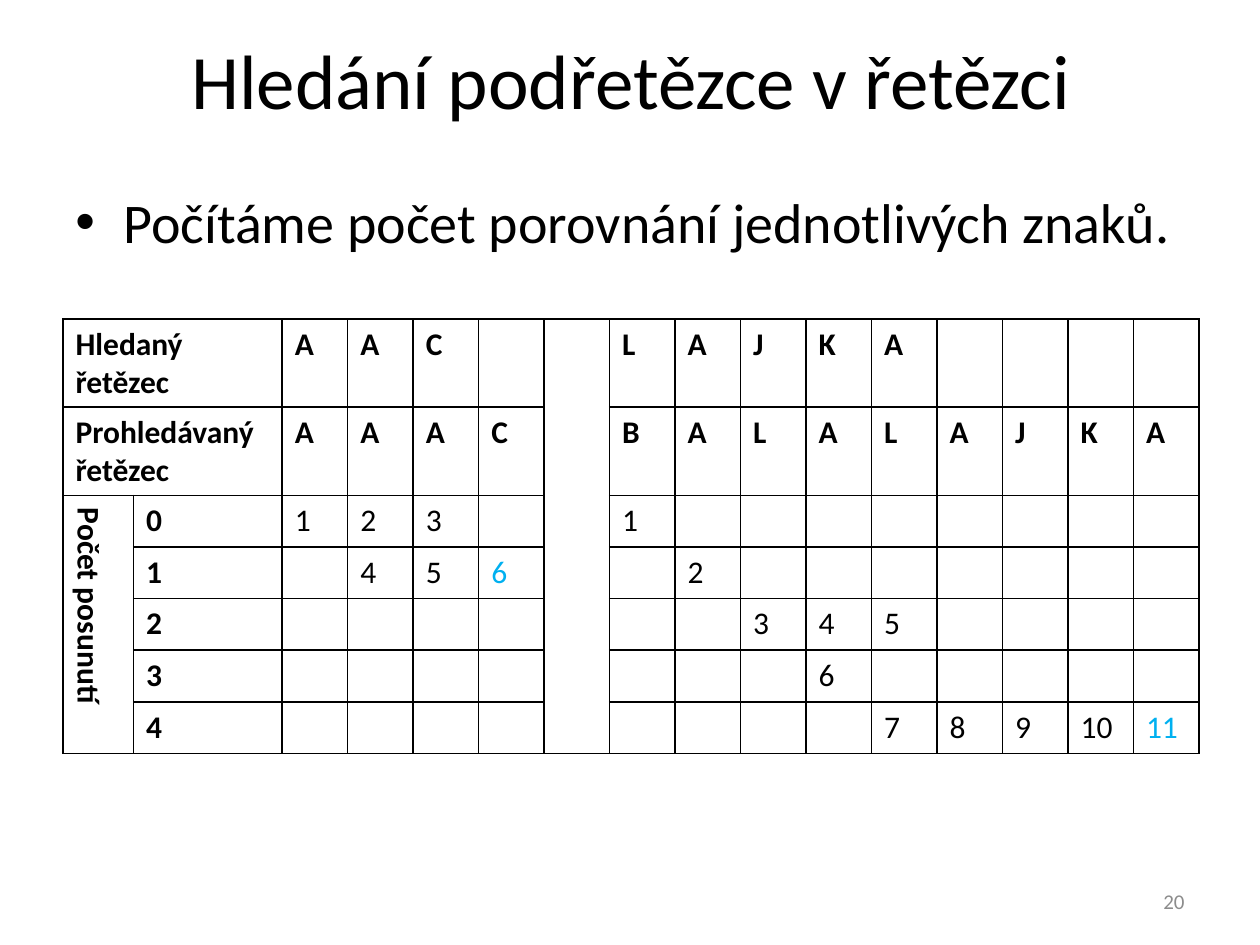
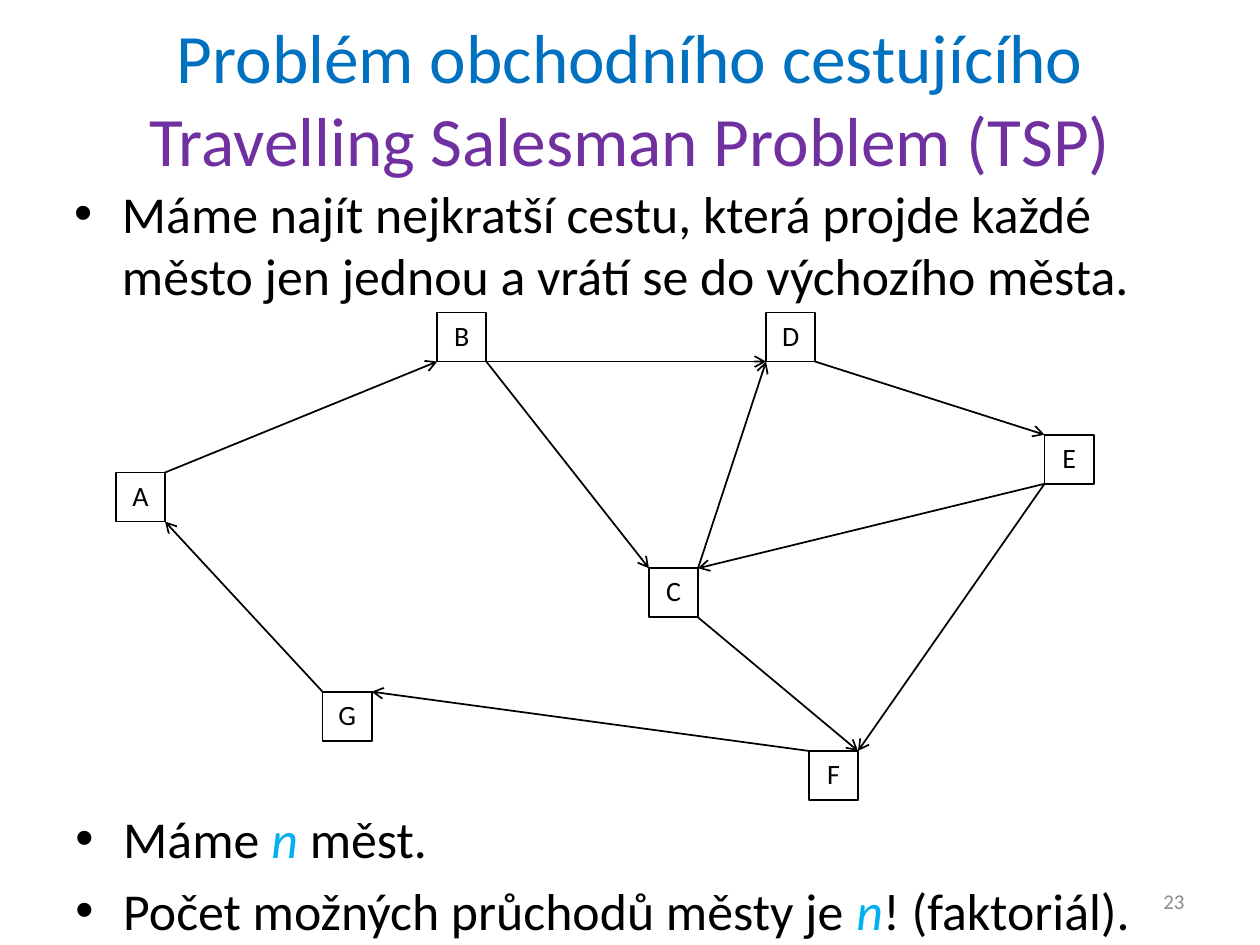
from lxml import etree
from pptx import Presentation
from pptx.dml.color import RGBColor
from pptx.enum.shapes import MSO_CONNECTOR, MSO_SHAPE
from pptx.enum.text import MSO_ANCHOR, PP_ALIGN
from pptx.oxml.ns import qn
from pptx.util import Inches, Pt

LEFT, CENTER, RIGHT = PP_ALIGN.LEFT, PP_ALIGN.CENTER, PP_ALIGN.RIGHT
TOP, MIDDLE = MSO_ANCHOR.TOP, MSO_ANCHOR.MIDDLE
RECTANGLE = MSO_SHAPE.RECTANGLE
STRAIGHT = MSO_CONNECTOR.STRAIGHT

COLORS = {
    "black": "000000",
    "grey": "8C8C8C",
    "blue": "0070C0",
    "purple": "7030A0",
    "accent": "00B0F0",
}
FONT = "Calibri"
LINE_WIDTH = Pt(1)
BREAK = "\n"

SEARCHES = [("AAC", "AAAC", 2), ("LAJKA", "BALALAJKA", 7)]
GAP_COLUMN = 6
COLUMN_WIDTHS = [0.56, 1.18] + [0.52] * 14
ROW_HEIGHT = 0.41
HEADER_ROWS = 2
SHIFTS = 5

CITY_SIZE = 0.39
CITIES = {
    "A": (0.92, 3.75),
    "B": (3.47, 2.48),
    "C": (5.15, 4.51),
    "D": (6.08, 2.48),
    "E": (8.29, 3.45),
    "F": (6.42, 5.96),
    "G": (2.56, 5.49),
}
CORNERS = {"tl": (0, 0), "tr": (1, 0), "bl": (0, 1), "br": (1, 1)}
ROADS = [
    ("A", "tr", "B", "bl"),
    ("B", "br", "C", "tl"),
    ("C", "tr", "D", "bl"),
    ("D", "br", "E", "tl"),
    ("E", "bl", "F", "tr"),
    ("F", "tl", "G", "tr"),
    ("G", "tl", "A", "br"),
    ("B", "br", "D", "bl"),
    ("E", "bl", "C", "tr"),
    ("C", "br", "F", "tr"),
]


def rgb(color):
    return RGBColor.from_string(COLORS[color])


def set_all(target, values):
    for name, value in values.items():
        setattr(target, name, value)


class Painter:
    def __init__(self):
        self.deck = Presentation()
        set_all(self.deck, {"slide_width": Inches(10), "slide_height": Inches(7.5)})
        self.page = None

    def new_page(self, number):
        self.page = self.deck.slides.add_slide(self.deck.slide_layouts[6])
        self.text((7.17, 6.95, 2.33, 0.4), [[(str(number), {"color": "grey"})]],
                  12, RIGHT, MIDDLE)

    def add_spans(self, para, spans, size):
        for text, style in spans:
            if text == BREAK:
                para.add_line_break()
                continue
            span = para.add_run()
            span.text = text
            look = {"name": FONT, "size": Pt(size), "bold": False, "italic": False, **style}
            span.font.color.rgb = rgb(look.pop("color", "black"))
            set_all(span.font, look)

    def text(self, place, paragraphs, size, align=LEFT, anchor=TOP, bullet=False):
        box = self.page.shapes.add_textbox(*map(Inches, place))
        frame = box.text_frame
        set_all(frame, {"word_wrap": True, "vertical_anchor": anchor})
        for index, spans in enumerate(paragraphs):
            para = frame.add_paragraph() if index else frame.paragraphs[0]
            para.alignment = align
            if index:
                para.space_before = Pt(round(size * 0.2))
            if bullet:
                props = para._p.get_or_add_pPr()
                props.set("marL", str(Inches(0.38)))
                props.set("indent", str(Inches(-0.38)))
                etree.SubElement(props, qn("a:buFont"), typeface="Arial")
                etree.SubElement(props, qn("a:buChar"), char="•")
            self.add_spans(para, spans, size)

    def title(self, place, spans, size):
        self.text(place, [spans], size, CENTER, MIDDLE)

    def bullets(self, place, paragraphs, size):
        self.text(place, paragraphs, size, bullet=True)

    def table(self, place, widths, row_count):
        height = row_count * ROW_HEIGHT
        grid = self.page.shapes.add_table(
            row_count, len(widths), *map(Inches, (*place, sum(widths), height))).table
        set_all(grid, {"first_row": False, "horz_banding": False})
        for column, width in zip(grid.columns, widths):
            column.width = Inches(width)
        for row in grid.rows:
            row.height = Inches(ROW_HEIGHT)
        return grid

    def borders(self, cell, sides="LRTB"):
        props = cell._tc.get_or_add_tcPr()
        for side in "LRTB":
            line = etree.SubElement(props, qn(f"a:ln{side}"), w=str(LINE_WIDTH))
            if side in sides:
                fill = etree.SubElement(line, qn("a:solidFill"))
                etree.SubElement(fill, qn("a:srgbClr"), val=COLORS["black"])
            else:
                etree.SubElement(line, qn("a:noFill"))
        cell.fill.background()

    def cell(self, grid, row, column, text, **style):
        para = grid.cell(row, column).text_frame.paragraphs[0]
        self.add_spans(para, [(text, style)], 18)

    def city(self, name, place):
        box = self.page.shapes.add_shape(
            RECTANGLE, *map(Inches, (*place, CITY_SIZE, CITY_SIZE)))
        box.shadow.inherit = False
        box.fill.background()
        box.line.color.rgb = rgb("black")
        box.line.width = LINE_WIDTH
        frame = box.text_frame
        margins = ("margin_left", "margin_top", "margin_right", "margin_bottom")
        set_all(frame, {"word_wrap": True, "vertical_anchor": MIDDLE,
                        **dict.fromkeys(margins, Inches(0.07))})
        para = frame.paragraphs[0]
        set_all(para, {"alignment": CENTER, "line_spacing": 0.9})
        self.add_spans(para, [(name, {})], 16)

    def arrow(self, start, end):
        road = self.page.shapes.add_connector(STRAIGHT, *map(Inches, (*start, *end)))
        road.line.color.rgb = rgb("black")
        road.line.width = LINE_WIDTH
        props = road._element.spPr
        etree.SubElement(props.get_or_add_ln(), qn("a:tailEnd"), type="arrow")
        etree.SubElement(props, qn("a:effectLst"))


def fill_search(painter, grid, pattern, searched, first_column):
    for row, word in enumerate((pattern, searched)):
        for offset, letter in enumerate(word):
            painter.cell(grid, row, first_column + offset, letter, bold=True)
    count = 0
    for shift in range(len(searched) - len(pattern) + 1):
        for offset, letter in enumerate(pattern):
            count += 1
            matches = searched[shift + offset] == letter
            found = matches and offset == len(pattern) - 1
            painter.cell(grid, HEADER_ROWS + shift, first_column + shift + offset,
                         str(count), color="accent" if found else "black")
            if not matches:
                break


def substring_page(painter):
    painter.new_page(20)
    painter.title((0.51, 0, 9, 1.25), [("Hledání podřetězce v řetězci", {})], 44)
    row_count = HEADER_ROWS + SHIFTS
    grid = painter.table((0.5, 2.53), COLUMN_WIDTHS, row_count)
    for row in range(row_count):
        for column in range(len(COLUMN_WIDTHS)):
            sides = "LRTB"
            if column == GAP_COLUMN:
                sides = "LR" + "T" * (row == 0) + "B" * (row == row_count - 1)
            painter.borders(grid.cell(row, column), sides)
    for row, label in enumerate(("Hledaný řetězec", "Prohledávaný řetězec")):
        grid.cell(row, 0).merge(grid.cell(row, 1))
        painter.cell(grid, row, 0, label, bold=True)
    shift_label = grid.cell(HEADER_ROWS, 0)
    shift_label.merge(grid.cell(row_count - 1, 0))
    shift_label._tc.get_or_add_tcPr().set("vert", "vert")
    painter.cell(grid, HEADER_ROWS, 0, "Počet posunutí", bold=True)
    for shift in range(SHIFTS):
        painter.cell(grid, HEADER_ROWS + shift, 1, str(shift), bold=True)
    for search in SEARCHES:
        fill_search(painter, grid, *search)
    painter.bullets((0.5, 1.44, 9, 1.05),
                    [[("Počítáme počet porovnání jednotlivých znaků.", {})]], 32)


def corner(city, name):
    return [start + CITY_SIZE * step for start, step in zip(CITIES[city], CORNERS[name])]


def salesman_page(painter):
    painter.new_page(23)
    painter.title((0.5, 0, 9, 1.55), [
        ("Problém obchodního cestujícího", {"color": "blue"}),
        (BREAK, {}),
        ("Travelling Salesman Problem (TSP)", {"color": "purple"}),
    ], 39.6)
    variable = ("n", {"color": "accent", "italic": True})
    painter.bullets((0.5, 6.35, 9, 1.18), [
        [("Máme ", {}), variable, (" měst.", {})],
        [("Počet možných průchodů městy je ", {}), variable, ("! (faktoriál).", {})],
    ], 29.6)
    for name, place in CITIES.items():
        painter.city(name, place)
    for origin, leaving, target, entering in ROADS:
        painter.arrow(corner(origin, leaving), corner(target, entering))
    painter.bullets((0.49, 1.39, 9, 1.12), [[(
        "Máme najít nejkratší cestu, která projde každé město jen jednou "
        "a vrátí se do výchozího města.", {})]], 29.6)


def main():
    painter = Painter()
    substring_page(painter)
    salesman_page(painter)
    painter.deck.save("out.pptx")


if __name__ == "__main__":
    main()
